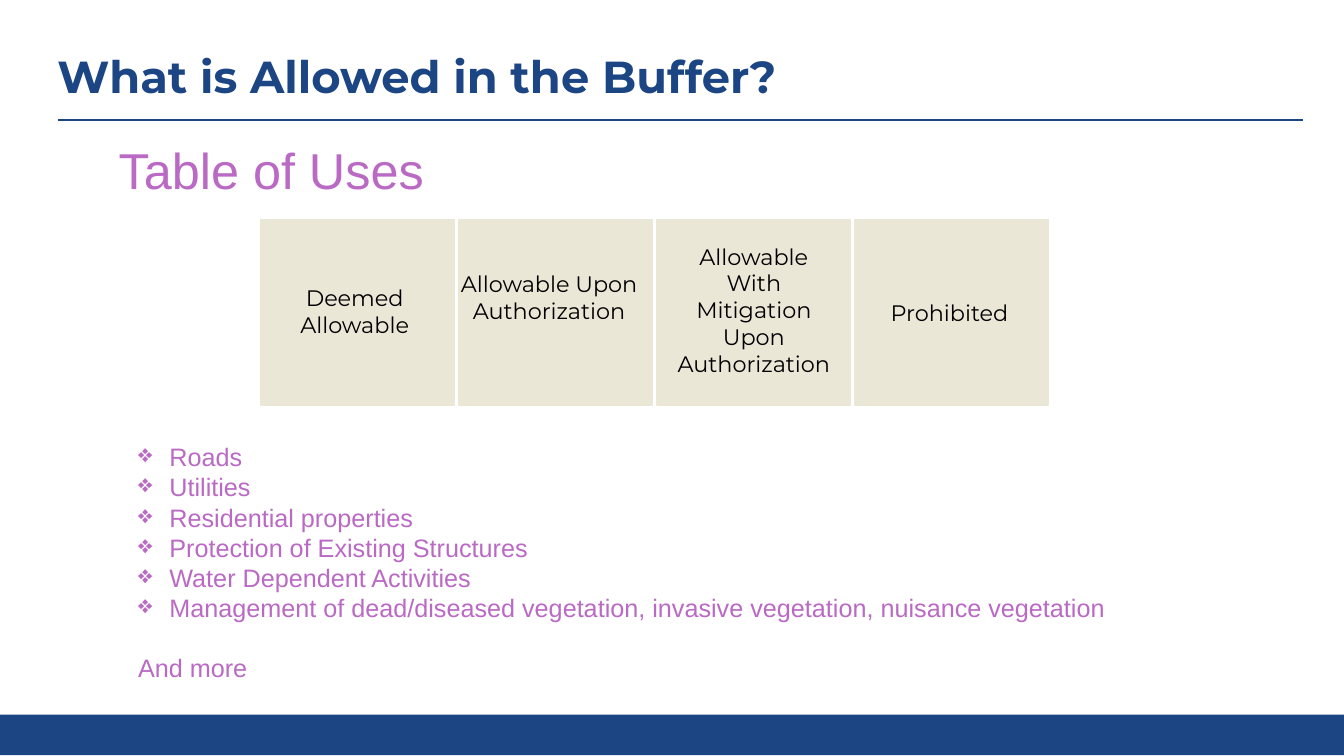
from lxml import etree
from pptx import Presentation
from pptx import util as u
from pptx.dml.color import RGBColor
from pptx.enum import shapes, text
from pptx.oxml.ns import qn

NAVY, SAND, ORCHID, BLACK = "1C4584", "EBE7D7", "BA6AC4", "000000"


def color(value):
    return RGBColor.from_string(value)


class SlideBuilder:
    heading_font = "Montserrat"
    body_font = "Arial"

    def __init__(self, presentation):
        self.slide = presentation.slides.add_slide(presentation.slide_layouts[5])

    def style(self, paragraph, font, size, fill, bold=False, align=text.PP_ALIGN.LEFT):
        paragraph.alignment = align
        paragraph.font.name = font
        paragraph.font.size = u.Pt(size)
        paragraph.font.bold = bold
        paragraph.font.color.rgb = color(fill)

    def title(self, content, left, top, width, height):
        shape = self.slide.shapes.title
        shape.left, shape.top = u.Cm(left), u.Cm(top)
        shape.width, shape.height = u.Cm(width), u.Cm(height)
        frame = shape.text_frame
        frame.text = content
        frame.auto_size = text.MSO_AUTO_SIZE.NONE
        frame.vertical_anchor = text.MSO_ANCHOR.MIDDLE
        frame.paragraphs[0].line_spacing = 0.9
        self.style(frame.paragraphs[0], self.heading_font, 32, NAVY, bold=True)

    def rectangle(self, left, top, width, height, fill, outlined=False):
        shape = self.slide.shapes.add_shape(
            shapes.MSO_SHAPE.RECTANGLE, u.Cm(left), u.Cm(top), u.Cm(width), u.Cm(height))
        shape.shadow.inherit = False
        shape.fill.solid()
        shape.fill.fore_color.rgb = color(fill)
        if outlined:
            shape.line.color.rgb = color(fill)
            shape.line.width = u.Pt(1)
        else:
            shape.line.fill.background()

    def rule(self, left, right, top):
        connector = self.slide.shapes.add_connector(
            shapes.MSO_CONNECTOR.STRAIGHT, u.Cm(left), u.Cm(top), u.Cm(right), u.Cm(top))
        connector.line.color.rgb = color(NAVY)
        connector.line.width = u.Pt(1.5)
        properties = connector._element.find(qn("p:spPr"))
        etree.SubElement(properties, qn("a:effectLst"))

    def text_box(self, content, left, top, width, height, wrap=True):
        shape = self.slide.shapes.add_textbox(
            u.Cm(left), u.Cm(top), u.Cm(width), u.Cm(height))
        frame = shape.text_frame
        frame.word_wrap = wrap
        frame.text = content
        return frame.paragraphs

    def label(self, content, left, top, width, height):
        for paragraph in self.text_box(content, left, top, width, height):
            self.style(paragraph, self.heading_font, 16, BLACK, align=text.PP_ALIGN.CENTER)

    def heading(self, content, left, top, width, height):
        paragraph = self.text_box(content, left, top, width, height, wrap=False)[0]
        self.style(paragraph, self.body_font, 36, ORCHID)

    def bullet_list(self, items, closing, left, top, width, height):
        paragraphs = self.text_box("\n".join(items + [closing]), left, top, width, height)
        for paragraph in paragraphs[:-1]:
            properties = paragraph._p.get_or_add_pPr()
            properties.set("marL", str(u.Cm(0.79)))
            properties.set("indent", str(-u.Cm(0.79)))
            etree.SubElement(properties, qn("a:buChar"), char="❖")
        for paragraph in paragraphs:
            self.style(paragraph, self.body_font, 18, ORCHID)
        paragraphs[-1].space_before = u.Pt(21)


def main():
    presentation = Presentation()
    presentation.slide_width, presentation.slide_height = u.Cm(33.87), u.Cm(19.05)
    builder = SlideBuilder(presentation)

    builder.title("What is Allowed in the Buffer?", 1.19, 1.22, 31.04, 1.55)
    builder.rectangle(0, 18.01, 33.87, 1.02, NAVY)
    builder.rule(1.45, 32.84, 3.02)

    categories = [
        ("Deemed Allowable", 6.45, 7.04, 2.39),
        ("Allowable Upon Authorization", 11.35, 6.68, 3.07),
        ("Allowable\nWith\nMitigation Upon Authorization", 16.51, 5.99, 4.45),
        ("Prohibited", 21.44, 7.42, 1.63),
    ]
    for column in range(len(categories)):
        builder.rectangle(6.58 + 4.99 * column, 5.54, 4.88, 4.67, SAND, outlined=True)
    for content, left, top, height in categories:
        builder.label(content, left, top, 4.98, height)

    builder.heading("Table of Uses", 2.74, 3.38, 8.28, 1.8)
    uses = [
        "Roads",
        "Utilities",
        "Residential properties",
        "Protection of Existing Structures",
        "Water Dependent Activities",
        "Management of dead/diseased vegetation, invasive vegetation, nuisance vegetation",
    ]
    builder.bullet_list(uses, "And more", 3.23, 11, 25.76, 6.4)
    presentation.save("out.pptx")


if __name__ == "__main__":
    main()
